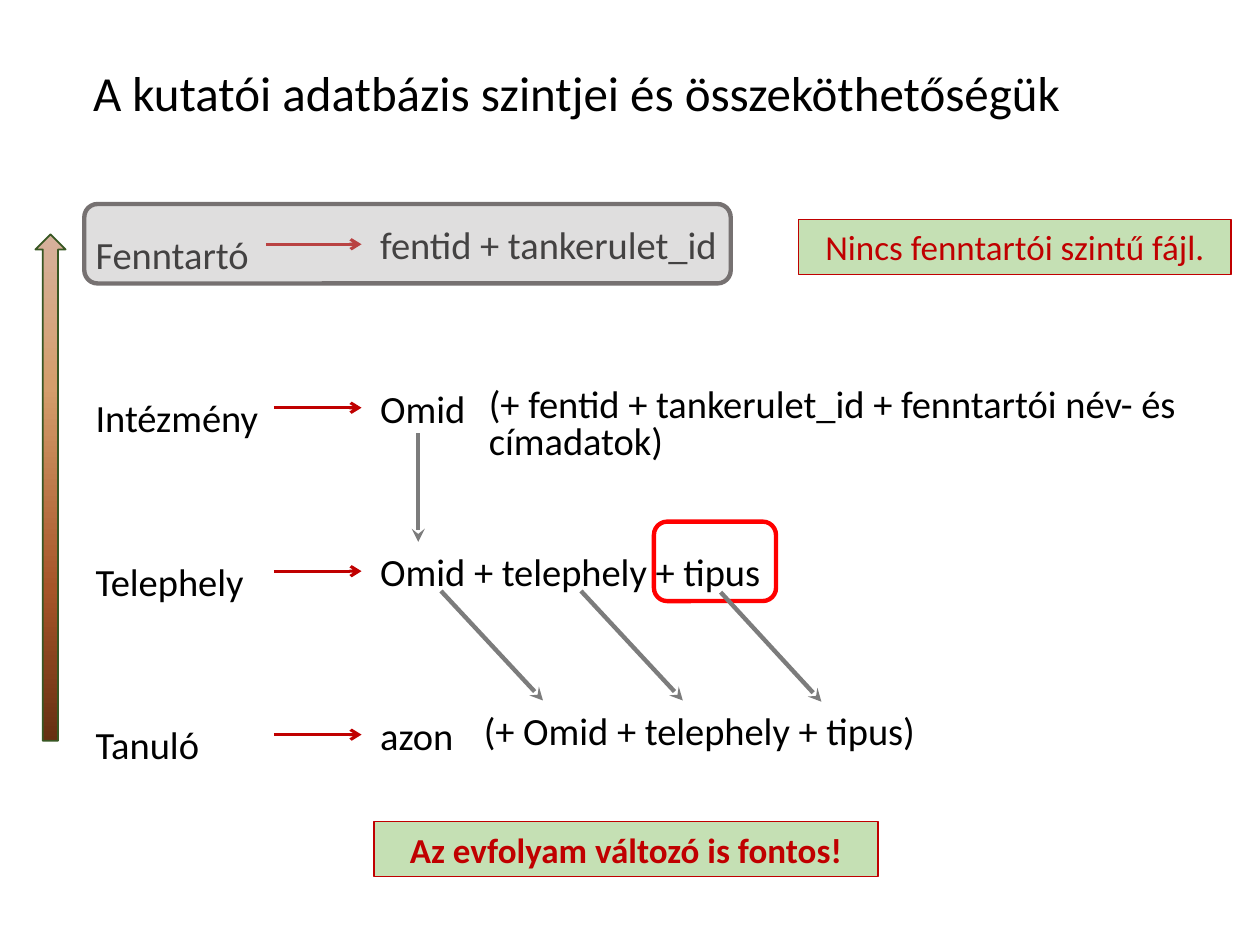
from lxml import etree
from pptx import Presentation
from pptx.dml.color import RGBColor
from pptx.enum.shapes import MSO_CONNECTOR, MSO_SHAPE
from pptx.enum.text import MSO_ANCHOR, PP_ALIGN
from pptx.oxml import parse_xml
from pptx.oxml.ns import nsdecls, qn
from pptx.util import Pt

LINE = MSO_CONNECTOR.STRAIGHT
RECT, ROUND, UP = MSO_SHAPE.RECTANGLE, MSO_SHAPE.ROUNDED_RECTANGLE, MSO_SHAPE.UP_ARROW
MID, TOP = MSO_ANCHOR.MIDDLE, MSO_ANCHOR.TOP
LEFT, CENTER = PP_ALIGN.LEFT, PP_ALIGN.CENTER

BLACK, RED, GRAY = "000000", "C00000", "7C7C7C"

# Content: level, its key, start of the arrow between them
TITLE = "A kutatói adatbázis szintjei és összeköthetőségük"
LEVELS = [
    ("Fenntartó", "fentid + tankerulet_id", 152),
    ("Intézmény", "Omid", 156.5),
    ("Telephely", "Omid + telephely + tipus", 156.5),
    ("Tanuló", "azon", 156.5),
]
# Text, then left, top, width, height
NOTES = [
    ("(+ fentid + tankerulet_id + fenntartói név- és címadatok)", 272.3, 218.9, 419.8, 50.4),
    ("(+ Omid + telephely + tipus)", 269.4, 405.4, 283.7, 28.8),
]
BOXES = [
    ("Nincs fenntartói szintű fájl.", False, 456.5, 125.3, 247),
    ("Az evfolyam változó is fontos!", True, 213.8, 469.4, 288),
]
# Start and end of the links between levels
LINKS = [
    (239, 247.7, 239, 309.6),
    (252, 337.7, 310.3, 400.3),
    (332, 337.7, 390.2, 400.3),
    (411.8, 338.4, 469.4, 401),
]
STOPS = [(0, "D6B19C"), (30, "D49E6C"), (70, "A65528"), (100, "663012")]

ROW, STEP, DROP, ROW_H = 139.6, 93.4, 5.5, 36

prs = Presentation()
prs.slide_width, prs.slide_height = Pt(720), Pt(540)
slide = prs.slides.add_slide(prs.slide_layouts[6])
shapes = slide.shapes


def rgb(code):
    return RGBColor.from_string(code)


def write(shape, words, size=22, color=BLACK, bold=False, align=LEFT, anchor=MID, space=1.0):
    frame = shape.text_frame
    frame.word_wrap = True
    frame.vertical_anchor = anchor
    frame.text = words
    para = frame.paragraphs[0]
    para.alignment = align
    para.line_spacing = space
    font = para.runs[0].font
    font.name, font.size, font.bold = "Calibri", Pt(size), bold
    font.color.rgb = rgb(color)


def label(words, x, y, w, h, **style):
    write(shapes.add_textbox(Pt(x), Pt(y), Pt(w), Pt(h)), words, **style)


def arrow(x1, y1, x2, y2, color, width, head):
    link = shapes.add_connector(LINE, Pt(x1), Pt(y1), Pt(x2), Pt(y2))
    link.line.color.rgb = rgb(color)
    link.line.width = Pt(width)
    etree.SubElement(link.line._get_or_add_ln(), qn("a:tailEnd"), type=head)
    etree.SubElement(link._element.spPr, qn("a:effectLst"))


def block(kind, x, y, w, h, line, width, fill=None):
    shape = shapes.add_shape(kind, Pt(x), Pt(y), Pt(w), Pt(h))
    shape.shadow.inherit = False
    shape.line.color.rgb = rgb(line)
    shape.line.width = Pt(width)
    if fill:
        shape.fill.solid()
        shape.fill.fore_color.rgb = rgb(fill)
    else:
        shape.fill.background()
    return shape


# Title
label(TITLE, 46.1, 21.6, 648, 65.5, size=28, space=0.9)

# Levels, keys and the arrows between them
for i, (name, key, start) in enumerate(LEVELS):
    y = ROW + i * STEP
    label(name, 47.5, y + DROP - ROW_H / 2, 116.6, ROW_H)
    label(key, 210.2, y - ROW_H / 2, 245.5, ROW_H)
    arrow(start, y, 206.6, y, RED, 1.75, "arrow")

# Notes beside the keys
for words, *place in NOTES:
    label(words, *place, anchor=TOP, space=0.8)

# Tall arrow with a colour ramp
ramp = block(UP, 20.2, 133.9, 17.3, 289.4, "385723", 1)
stops = "".join(
    f'<a:gs pos="{pos * 1000}"><a:srgbClr val="{code}"/></a:gs>' for pos, code in STOPS
)
props = ramp._element.spPr
props.replace(
    props.find(qn("a:noFill")),
    parse_xml(
        f'<a:gradFill {nsdecls("a")} rotWithShape="1"><a:gsLst>{stops}</a:gsLst>'
        '<a:lin ang="5400000" scaled="0"/></a:gradFill>'
    ),
)

# Veil over the top level
veil = block(ROUND, 48.2, 116.6, 369.4, 45.4, "767171", 2.5, "AFABAB")
tint = veil._element.spPr.find(qn("a:solidFill"))[0]
etree.SubElement(tint, qn("a:alpha"), val="39000")

# Green remarks
for words, bold, x, y, w in BOXES:
    box = block(RECT, x, y, w, 31.5, RED, 0.75, "C5E0B4")
    write(box, words, size=20, color=RED, bold=bold, align=CENTER)

# Frame around the type, then the links
block(ROUND, 373.7, 298.1, 69.8, 45.4, "FF0000", 2.5)
for ends in LINKS:
    arrow(*ends, GRAY, 2.5, "stealth")

prs.save("out.pptx")
